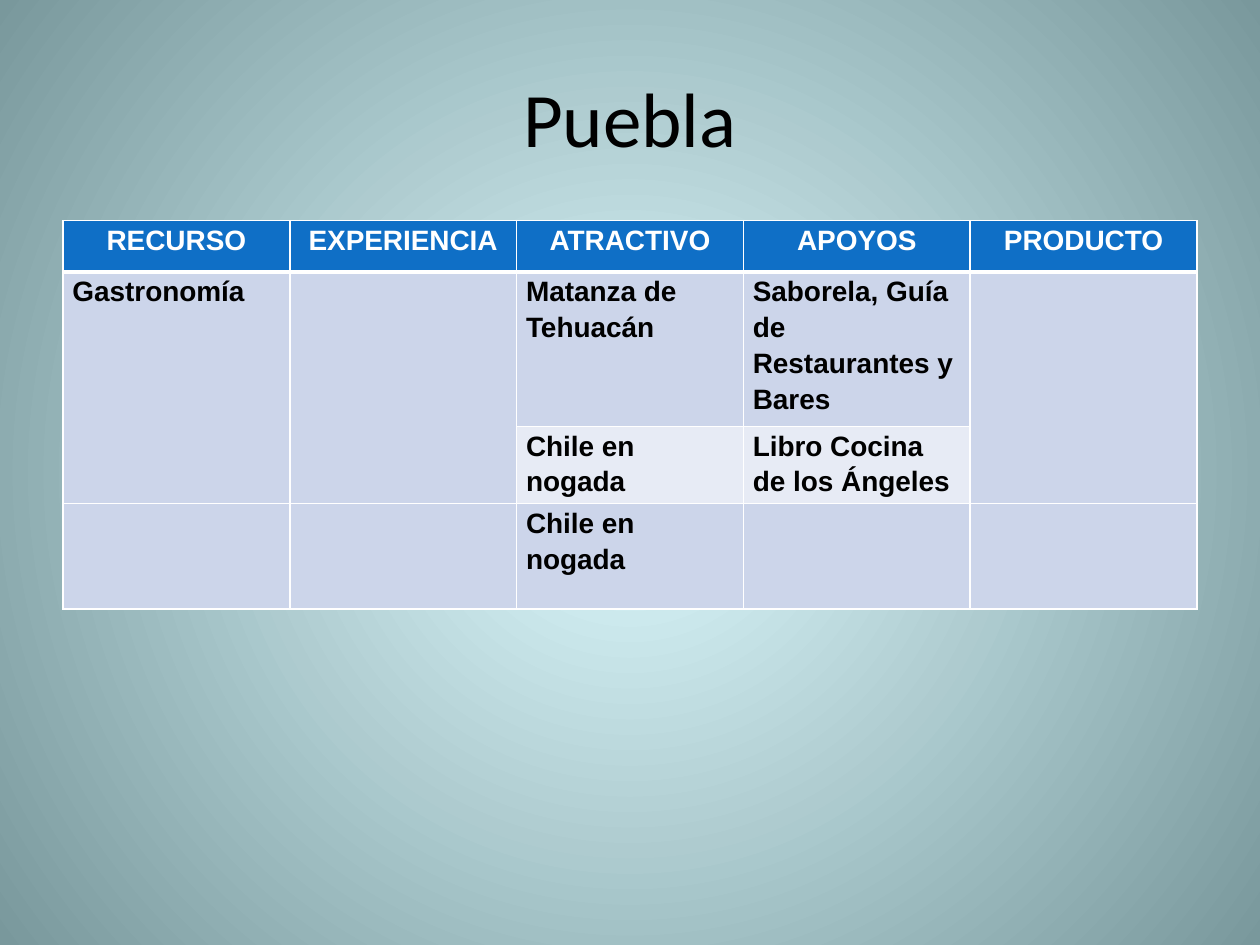
from pptx import Presentation
from pptx.dml.color import RGBColor
from pptx.enum.text import MSO_ANCHOR as Anchor, PP_ALIGN as Align
from pptx.oxml import parse_xml
from pptx.oxml.ns import nsdecls, qn
from pptx.util import Cm, Pt

BLACK = RGBColor(0x00, 0x00, 0x00)
WHITE = RGBColor(0xFF, 0xFF, 0xFF)
BLUE = RGBColor(0x0F, 0x6F, 0xC6)
BAND_DARK = RGBColor(0xCC, 0xD5, 0xEA)
BAND_LIGHT = RGBColor(0xE7, 0xEB, 0xF5)
GLOW = RGBColor(0xDE, 0xFB, 0xFF)
TEAL = RGBColor(0x79, 0x98, 0x9C)

ROWS = [
    ["RECURSO", "EXPERIENCIA", "ATRACTIVO", "APOYOS", "PRODUCTO"],
    ["Gastronomía", "", "Matanza de Tehuacán", "Saborela, Guía de Restaurantes y Bares", ""],
    ["", "", "Chile en nogada", "Libro Cocina de los Ángeles", ""],
    ["", "", "Chile en nogada", "", ""],
]
ROW_HEIGHTS = [1.03, 1.03, 1.03, 2.13]
ROW_FILLS = [BLUE, BAND_DARK, BAND_LIGHT, BAND_DARK]
MERGED_COLUMNS = [0, 1, 4]


def format_text(paragraph, font_name, size, color, bold=False):
    for run in paragraph.runs:
        run.font.name = font_name
        run.font.size = Pt(size)
        run.font.bold = bold
        run.font.color.rgb = color


def set_borders(cell, bottom_width):
    properties = cell._tc.get_or_add_tcPr()
    widths = {"lnL": 1, "lnR": 1, "lnT": 1, "lnB": bottom_width}
    for position, (side, width) in enumerate(widths.items()):
        properties.insert(position, parse_xml(
            f'<a:{side} {nsdecls("a")} w="{Pt(width)}"><a:solidFill>'
            f'<a:srgbClr val="{WHITE}"/></a:solidFill></a:{side}>'))


presentation = Presentation()
presentation.slide_width = Cm(25.4)
presentation.slide_height = Cm(19.05)
slide = presentation.slides.add_slide(presentation.slide_layouts[6])

background = slide.background.fill
background.gradient()
for stop, color, position in zip(background.gradient_stops, [GLOW, TEAL], [0, 1]):
    stop.color.rgb = color
    stop.position = position
gradient = slide.element.find(".//" + qn("a:gradFill"))
gradient.replace(gradient.find(qn("a:lin")), parse_xml(
    f'<a:path {nsdecls("a")} path="circle">'
    '<a:fillToRect l="50000" t="50000" r="50000" b="50000"/></a:path>'))

title = slide.shapes.add_textbox(Cm(1.27), Cm(0.76), Cm(22.86), Cm(3.18))
title.text_frame.word_wrap = True
title.text_frame.vertical_anchor = Anchor.MIDDLE
title.text_frame.text = "Puebla"
paragraph = title.text_frame.paragraphs[0]
paragraph.alignment = Align.CENTER
format_text(paragraph, "Calibri", 44, BLACK)

table = slide.shapes.add_table(
    len(ROWS), len(ROWS[0]), Cm(1.27), Cm(4.45), Cm(22.86), Cm(sum(ROW_HEIGHTS))).table
for row_index, texts in enumerate(ROWS):
    is_header = row_index == 0
    table.rows[row_index].height = Cm(ROW_HEIGHTS[row_index])
    for column_index, text in enumerate(texts):
        cell = table.cell(row_index, column_index)
        cell.margin_left = cell.margin_right = Cm(0.19)
        cell.margin_top = cell.margin_bottom = Cm(0)
        cell.fill.solid()
        cell.fill.fore_color.rgb = ROW_FILLS[row_index]
        set_borders(cell, 3 if is_header else 1)
        cell.text_frame.text = text
        paragraph = cell.text_frame.paragraphs[0]
        paragraph.line_spacing = 1.15
        paragraph.alignment = Align.CENTER if is_header else Align.LEFT
        format_text(paragraph, "Arial", 16, WHITE if is_header else BLACK, bold=True)

for column_index in MERGED_COLUMNS:
    table.cell(1, column_index).merge(table.cell(2, column_index))

presentation.save("out.pptx")
